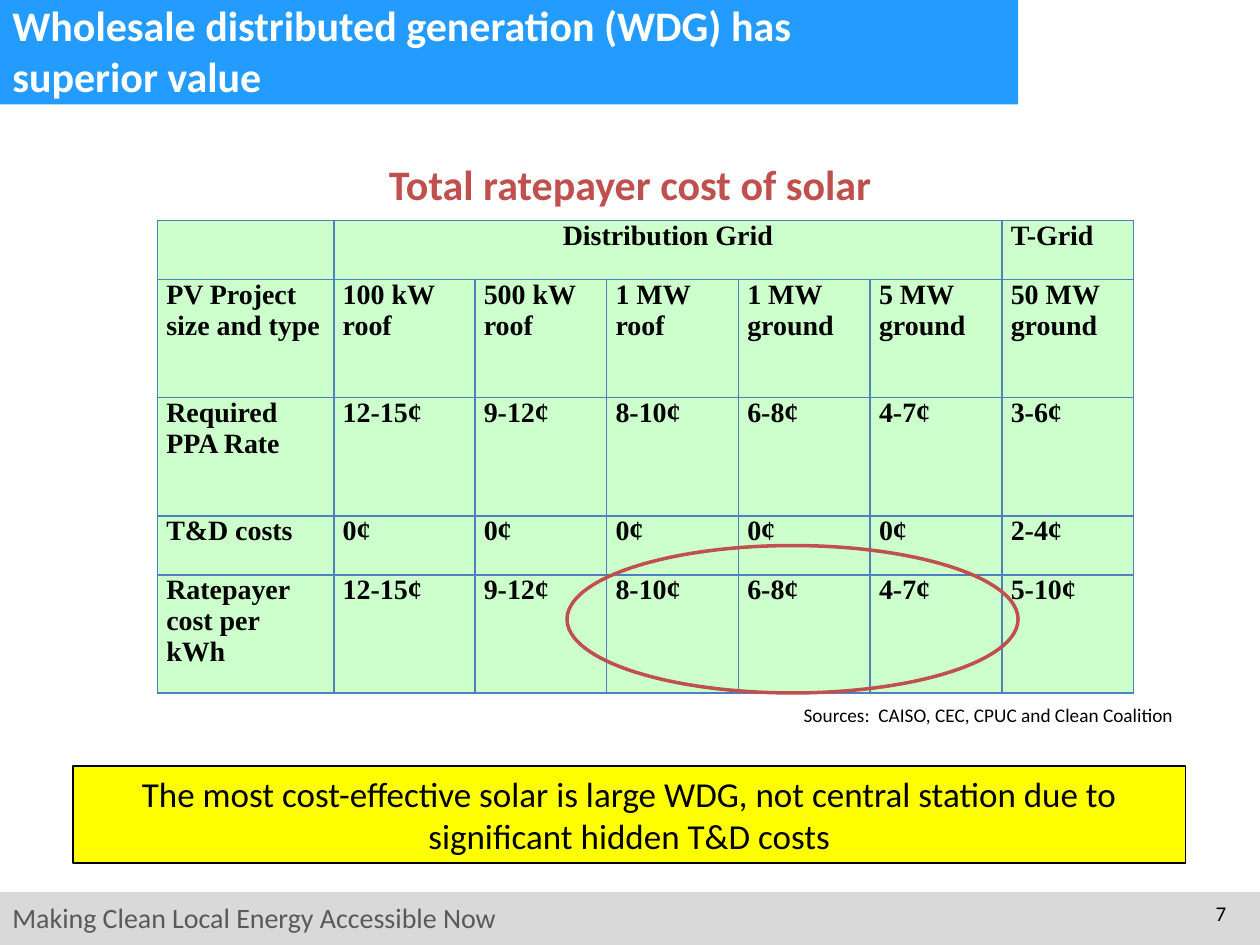
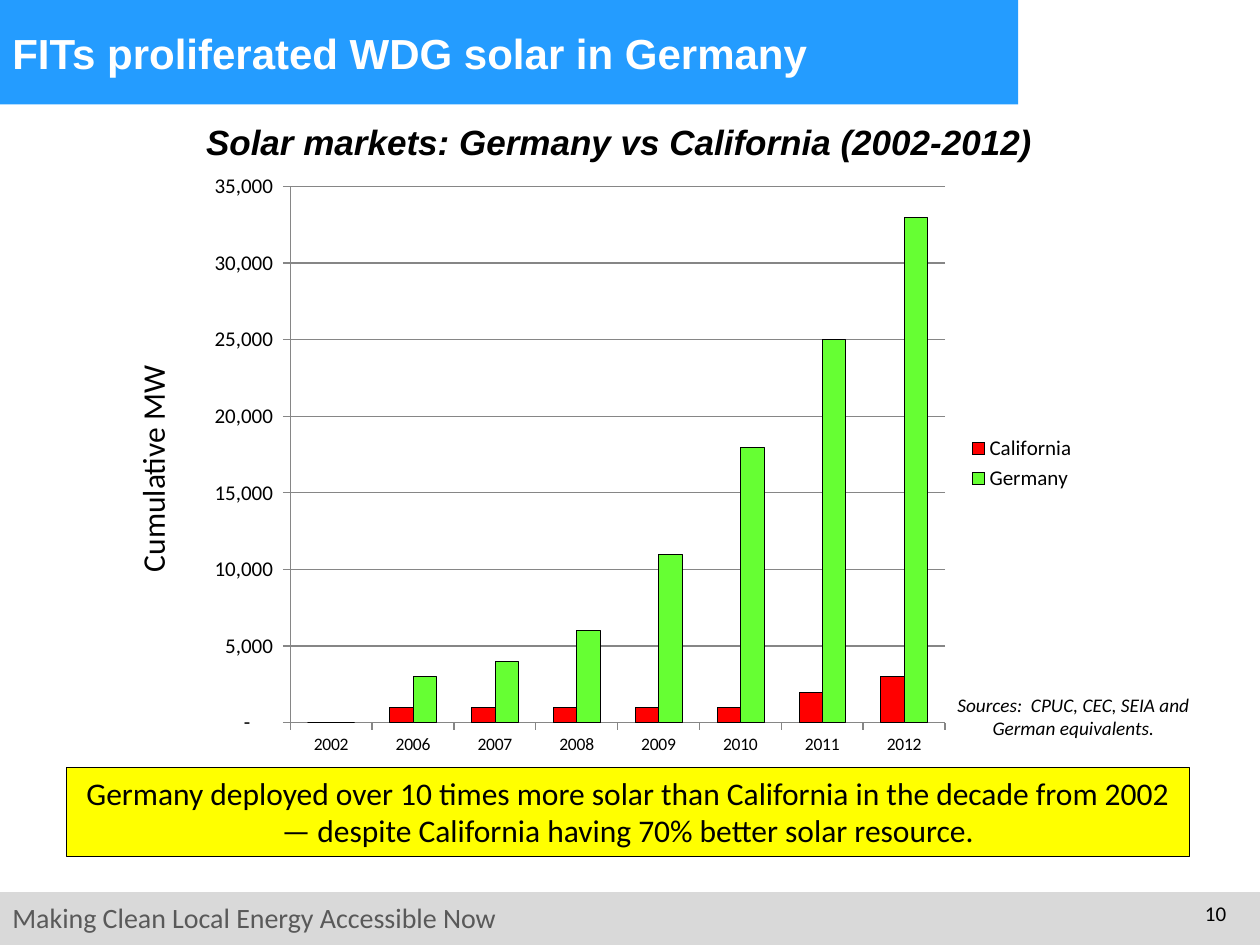
import pptx
import pptx.chart.data
import pptx.dml.color
import pptx.enum.chart
import pptx.enum.shapes
import pptx.enum.text
import pptx.oxml
import pptx.oxml.ns
import pptx.util

Inches = pptx.util.Inches
Pt = pptx.util.Pt
Shape = pptx.enum.shapes.MSO_SHAPE
Align = pptx.enum.text.PP_ALIGN
Anchor = pptx.enum.text.MSO_ANCHOR
NS = pptx.oxml.ns.nsdecls

COLORS = {
    "blue": "249CFF", "band": "D9D9D9", "slogan": "595959", "white": "FFFFFF",
    "black": "000000", "note": "FFFF00", "accent": "C0504D", "cell": "CCFFCC",
    "border": "4F81BD", "cal": "FF0000", "ger": "66FF33", "axis": "868686",
}


def rgb(name):
    return pptx.dml.color.RGBColor.from_string(COLORS[name])


class Deck:
    def __init__(self):
        self.prs = pptx.Presentation()
        self.prs.slide_width = Inches(10)
        self.prs.slide_height = Inches(7.5)
        self.slide = None

    def page(self, num, title, at, font="Calibri"):
        """Start a slide with its title band and footer."""
        self.slide = self.prs.slides.add_slide(self.prs.slide_layouts[6])
        self.shape((0, 7.08, 10, 0.42), fill="band")
        self.text((0, 7.1, 5.17, 0.37), "Making Clean Local Energy Accessible Now",
                  16, "slogan")
        self.shape((0, 0, 8.08, 0.83), fill="blue")
        self.text((9.33, 7.1, 0.5, 0.4), str(num), 12, align=Align.RIGHT)
        self.text(at, title, 24, "white", font=font, bold=True,
                  anchor=Anchor.MIDDLE)

    def style(self, para, size, color="black", font="Calibri", bold=False,
              italic=False, align=Align.LEFT):
        para.alignment = align
        para.font.size = Pt(size)
        para.font.name = font
        para.font.bold = bold
        para.font.italic = italic
        para.font.color.rgb = rgb(color)

    def shape(self, at, kind=Shape.RECTANGLE, fill=None, line=None, width=0.75):
        shape = self.slide.shapes.add_shape(kind, *map(Inches, at))
        shape.shadow.inherit = False
        self.paint(shape, fill, line, width)
        return shape

    def paint(self, part, fill, line, width):
        if fill:
            part.fill.solid()
            part.fill.fore_color.rgb = rgb(fill)
        else:
            part.fill.background()
        if line:
            part.line.color.rgb = rgb(line)
            part.line.width = Pt(width)
        else:
            part.line.fill.background()

    def text(self, at, words, size, color="black", anchor=Anchor.TOP, vert=None,
             **look):
        box = self.slide.shapes.add_textbox(*map(Inches, at))
        frame = box.text_frame
        frame.word_wrap = True
        frame.vertical_anchor = anchor
        if vert:
            frame._txBody.bodyPr.set("vert", vert)
        frame.paragraphs[0].text = words
        self.style(frame.paragraphs[0], size, color, **look)

    def note(self, at, words, size):
        """Yellow box with the slide's conclusion."""
        frame = self.shape(at, fill="note", line="black").text_frame
        frame.word_wrap = True
        frame.vertical_anchor = Anchor.TOP
        frame.paragraphs[0].text = words
        self.style(frame.paragraphs[0], size, align=Align.CENTER)

    def table(self, at, cols, rows, cells):
        table = self.slide.shapes.add_table(
            len(rows), len(cols), *map(Inches, at)).table
        table.first_row = table.horz_banding = False
        for col, width in zip(table.columns, cols):
            col.width = Inches(width)
        for row, height, words in zip(table.rows, rows, cells):
            row.height = Inches(height)
            for cell, word in zip(row.cells, words):
                self.cell(cell, word)
        return table

    def cell(self, cell, word):
        cell.margin_left = cell.margin_right = Inches(0.07)
        cell.margin_top = cell.margin_bottom = 0
        para = cell.text_frame.paragraphs[0]
        para.text = word
        self.style(para, 16, font="Times New Roman", bold=True)
        props = cell._tc.get_or_add_tcPr()
        for side in ("lnL", "lnR", "lnT", "lnB"):
            props.append(pptx.oxml.parse_xml(
                f'<a:{side} {NS("a")} w="12700"><a:solidFill>'
                f'<a:srgbClr val="{COLORS["border"]}"/></a:solidFill></a:{side}>'))
        cell.fill.solid()
        cell.fill.fore_color.rgb = rgb("cell")

    def chart(self, at, cats, series, plot):
        """Clustered columns; series holds (name, colour, values)."""
        data = pptx.chart.data.CategoryChartData()
        data.categories = cats
        for name, _, vals in series:
            data.add_series(name, vals)
        chart = self.slide.shapes.add_chart(
            pptx.enum.chart.XL_CHART_TYPE.COLUMN_CLUSTERED,
            *map(Inches, at), data).chart
        chart.has_title = False
        chart.font.size = Pt(10)
        chart.font.name = "Calibri"
        chart.font.color.rgb = rgb("black")
        chart.has_legend = True
        chart.legend.position = pptx.enum.chart.XL_LEGEND_POSITION.RIGHT
        chart.legend.include_in_layout = False
        chart.legend.font.size = Pt(12)
        cols = chart.plots[0]
        cols.gap_width = 150
        cols.overlap = 0
        cols.vary_by_categories = False
        for part, (_, color, _) in zip(cols.series, series):
            self.paint(part.format, color, "black", 0.25)
        value = chart.value_axis
        value.minimum_scale, value.maximum_scale = 0, 35000
        value.major_unit = 5000
        value.tick_labels.font.size = Pt(12)
        value.tick_labels.number_format = (
            r'_(* #,##0_);_(* \(#,##0\);_(* "-"??_);_(')
        value.tick_labels.number_format_is_linked = False
        value.has_major_gridlines = True
        lines = [value.major_gridlines.format.line]
        for axis in (value, chart.category_axis):
            axis.major_tick_mark = pptx.enum.chart.XL_TICK_MARK.OUTSIDE
            lines.append(axis.format.line)
        for line in lines:
            line.color.rgb = rgb("axis")
            line.width = Pt(0.75)
        self.place(chart, plot)

    def place(self, chart, plot):
        """Fix the inner plot area, as shares of the chart."""
        area = chart._chartSpace.chart.plotArea
        for old in area.findall(pptx.oxml.ns.qn("c:layout")):
            area.remove(old)
        sizes = "".join(f'<c:{key} val="{val}"/>' for key, val in zip("xywh", plot))
        area.insert(0, pptx.oxml.parse_xml(
            f'<c:layout {NS("c")}><c:manualLayout><c:layoutTarget val="inner"/>'
            f'<c:xMode val="edge"/><c:yMode val="edge"/>{sizes}'
            '</c:manualLayout></c:layout>'))


def costs(deck):
    deck.page(7, "Wholesale distributed generation (WDG) has\vsuperior value",
              (0, 0.08, 7, 0.64))
    deck.note((0.58, 6.08, 8.83, 0.77),
              "The most cost-effective solar is large WDG, not central station "
              "due to significant hidden T&D costs", 20)
    cells = [
        ["", "Distribution Grid", "", "", "", "", "T-Grid"],
        ["PV Project size and type", "100 kW roof", "500 kW roof", "1 MW roof",
         "1 MW ground", "5 MW ground", "50 MW ground"],
        ["Required PPA Rate", "12-15¢", "9-12¢", "8-10¢", "6-8¢", "4-7¢", "3-6¢"],
        ["T&D costs"] + ["0¢"] * 5 + ["2-4¢"],
        ["Ratepayer cost per kWh", "12-15¢", "9-12¢", "8-10¢", "6-8¢", "4-7¢",
         "5-10¢"],
    ]
    wide, head, first = 7.75, 1.4, 1.12
    rest = (wide - head - first) / 5
    unit = 3.75 / 8
    table = deck.table((1.25, 1.75, wide, 3.75), [head, first] + [rest] * 5,
                       [unit, 2 * unit, 2 * unit, unit, 2 * unit], cells)
    grid = table.cell(0, 1)
    grid.merge(table.cell(0, 5))
    grid.text_frame.paragraphs[0].alignment = Align.CENTER
    deck.text((6.07, 5.53, 3.34, 0.29),
              "Sources:  CAISO, CEC, CPUC and Clean Coalition", 11,
              align=Align.RIGHT)
    deck.text((2.54, 1.21, 4.92, 0.51), "Total ratepayer cost of solar", 24,
              "accent", bold=True, align=Align.CENTER)
    deck.shape((4.5, 4.33, 3.58, 1.17), Shape.OVAL, line="accent", width=2)


def markets(deck):
    deck.page(10, "FITs proliferated WDG solar in Germany", (0, 0, 8.17, 0.83),
              "Arial")
    deck.text((0, 0.91, 9.83, 0.75),
              "Solar markets: Germany vs California (2002-2012)", 20,
              font="Arial", bold=True, italic=True, align=Align.CENTER)
    deck.note((0.53, 6.09, 8.91, 0.71),
              "Germany deployed over 10 times more solar than California in the "
              "decade from 2002 — despite California having 70% better solar "
              "resource.", 18)
    deck.text((7.27, 5.45, 2.5, 0.47),
              "Sources:  CPUC, CEC, SEIA and\vGerman equivalents.", 11,
              italic=True, align=Align.CENTER)
    deck.text((1.01, 1.81, 0.5, 2.83), "Cumulative MW", 18, vert="vert270")
    deck.chart(
        (1.52, 1.29, 7.12, 4.78),
        ["2002"] + [str(year) for year in range(2006, 2013)],
        [("California", "cal", [0] + [1000] * 5 + [2000, 3000]),
         ("Germany", "ger",
          [0, 3000, 4000, 6000, 11000, 18000, 25000, 33000])],
        (0.11, 0.04, 0.73, 0.89))


def main():
    deck = Deck()
    costs(deck)
    markets(deck)
    deck.prs.save("out.pptx")


if __name__ == "__main__":
    main()
